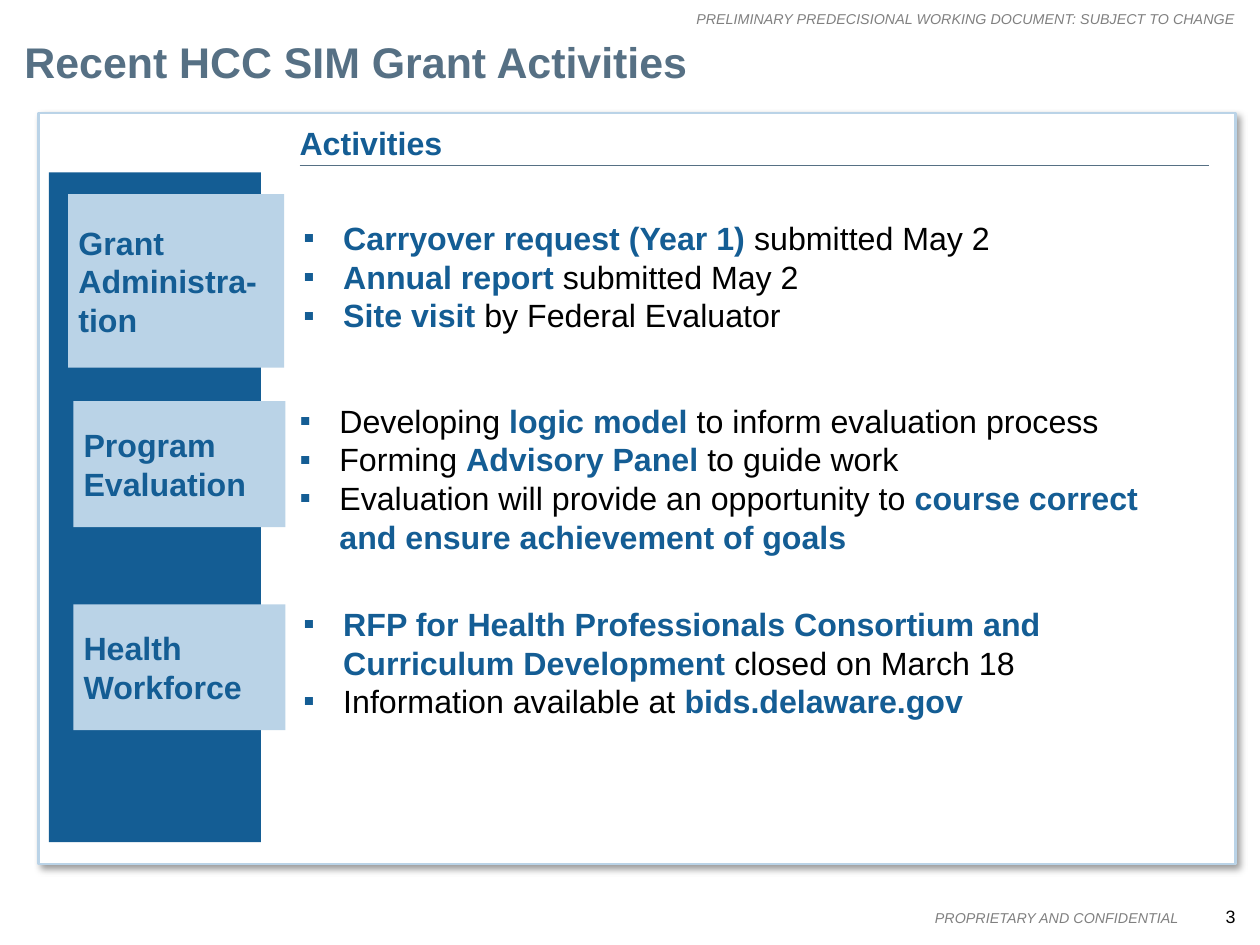
from dataclasses import dataclass

import pptx
import pptx.dml.color
import pptx.enum.shapes
import pptx.enum.text
import pptx.oxml
import pptx.oxml.ns
import pptx.util
from lxml import etree

PX = 9144  # EMU per px, 100 px to the inch
ALIGN = pptx.enum.text.PP_ALIGN
ANCHOR = pptx.enum.text.MSO_ANCHOR


@dataclass(frozen=True)
class Theme:
    font: str = "Arial"
    navy: str = "145D94"
    pale: str = "BAD3E7"
    slate: str = "567084"
    grey: str = "808080"
    black: str = "000000"
    white: str = "FFFFFF"
    title: int = 24
    body: int = 18
    number: int = 10
    note: int = 8


def rgb(colour):
    return pptx.dml.color.RGBColor.from_string(colour)


def add_xml(parent, tag, **attributes):
    element = etree.SubElement(parent, pptx.oxml.ns.qn(tag))
    for name, value in attributes.items():
        element.set(name, str(value))
    return element


class SlideBuilder:
    def __init__(self, page, theme):
        self.page = page
        self.theme = theme

    def style(self, font, size, colour, bold=False, italic=False):
        font.name = self.theme.font
        font.size = pptx.util.Pt(size)
        font.color.rgb = rgb(colour)
        font.bold = bold
        font.italic = italic

    def frame(self, shape, inset=0, anchor=ANCHOR.TOP, wrap=True):
        frame = shape.text_frame
        frame.word_wrap = wrap
        frame.vertical_anchor = anchor
        frame.margin_left = frame.margin_right = inset * PX
        frame.margin_top = frame.margin_bottom = inset * PX
        return frame

    def paragraphs(self, frame, lines):
        for index, line in enumerate(lines):
            para = frame.paragraphs[0] if index == 0 else frame.add_paragraph()
            yield para, line

    def text(self, area, words, size, colour, bold=False, italic=False,
             align=ALIGN.LEFT, anchor=ANCHOR.TOP, wrap=True):
        box = self.page.shapes.add_textbox(*(value * PX for value in area))
        para = self.frame(box, 0, anchor, wrap).paragraphs[0]
        para.text = words
        para.alignment = align
        self.style(para.font, size, colour, bold, italic)

    def rectangle(self, area, fill, outline=None):
        shape = self.page.shapes.add_shape(
            pptx.enum.shapes.MSO_SHAPE.RECTANGLE, *(value * PX for value in area))
        shape.shadow.inherit = False
        shape.fill.solid()
        shape.fill.fore_color.rgb = rgb(fill)
        if outline:
            shape.line.color.rgb = rgb(outline)
            shape.line.width = pptx.util.Pt(1.5)
        else:
            shape.line.fill.background()
        return shape

    def panel(self, area):
        shape = self.rectangle(area, self.theme.white, self.theme.pale)
        effects = shape._element.spPr.find(pptx.oxml.ns.qn("a:effectLst"))
        shadow = add_xml(effects, "a:outerShdw", blurRad=pptx.util.Pt(4),
                         dist=pptx.util.Pt(3), dir=45 * 60000, algn="tl", rotWithShape=0)
        colour = add_xml(shadow, "a:srgbClr", val=self.theme.black)
        add_xml(colour, "a:alpha", val=40000)

    def label(self, area, lines):
        shape = self.rectangle(area, self.theme.pale)
        frame = self.frame(shape, 8, ANCHOR.MIDDLE)
        for para, line in self.paragraphs(frame, lines):
            para.text = line
            para.alignment = ALIGN.LEFT
            self.style(para.font, self.theme.body, self.theme.navy, bold=True)

    def bullets(self, area, lines):
        """Text between ** marks is emphasised."""
        box = self.page.shapes.add_textbox(*(value * PX for value in area))
        for para, line in self.paragraphs(self.frame(box), lines):
            properties = para._p.get_or_add_pPr()
            properties.set("marL", str(31 * PX))
            properties.set("indent", str(-31 * PX))
            add_xml(add_xml(properties, "a:buClr"), "a:srgbClr", val=self.theme.navy)
            add_xml(properties, "a:buFont", typeface=self.theme.font)
            add_xml(properties, "a:buChar", char="▪")
            self.style(para.font, self.theme.body, self.theme.black)
            for index, words in enumerate(line.split("**")):
                if words:
                    span = para.add_run()
                    span.text = words
                    if index % 2:
                        span.font.bold = True
                        span.font.color.rgb = rgb(self.theme.navy)

    def rule(self, left, right, y):
        line = self.page.shapes.add_connector(
            pptx.enum.shapes.MSO_CONNECTOR.STRAIGHT, left * PX, y * PX, right * PX, y * PX)
        line.line.color.rgb = rgb(self.theme.slate)
        line.line.width = pptx.util.Pt(0.75)
        add_xml(line._element.spPr, "a:effectLst")


# Label area, label lines, bullet area, bullet lines
ACTIVITIES = [
    ((53, 151, 168, 135), ["Grant Administra-", "tion"],
     (236, 170, 688, 91),
     ["**Carryover request (Year 1) **submitted May 2",
      "**Annual report **submitted May 2",
      "**Site visit **by Federal Evaluator"]),
    ((57, 312, 165, 98), ["Program Evaluation"],
     (233, 312, 688, 121),
     ["Developing **logic model **to inform evaluation process",
      "Forming **Advisory Panel** to guide work",
      "Evaluation will provide an opportunity to "
      "**course correct and ensure achievement of goals**"]),
    ((57, 470, 165, 98), ["Health Workforce"],
     (236, 470, 688, 91),
     ["**RFP for Health Professionals Consortium and Curriculum Development **"
      "closed on March 18",
      "Information available at **bids.delaware.gov**"]),
]


def main():
    deck = pptx.Presentation()
    deck.slide_width, deck.slide_height = 980 * PX, 735 * PX
    theme = Theme()
    builder = SlideBuilder(deck.slides.add_slide(deck.slide_layouts[6]), theme)

    # Header and footer
    builder.text((537, 8, 424, 13),
                 "PRELIMINARY PREDECISIONAL WORKING DOCUMENT: SUBJECT TO CHANGE",
                 theme.note, theme.grey, italic=True, align=ALIGN.RIGHT, wrap=False)
    builder.text((724, 707, 193, 13), "PROPRIETARY AND CONFIDENTIAL", theme.note,
                 theme.grey, italic=True, align=ALIGN.RIGHT, anchor=ANCHOR.MIDDLE, wrap=False)
    builder.text((944, 704, 17, 17), "3", theme.number, theme.black,
                 align=ALIGN.RIGHT, anchor=ANCHOR.MIDDLE, wrap=False)
    builder.text((19, 28, 943, 40), "Recent HCC SIM Grant Activities",
                 theme.title, theme.slate, bold=True)

    # Panel with side band and column heading
    builder.panel((30, 88, 931, 584))
    builder.rectangle((38, 134, 165, 521), theme.navy)
    builder.text((233, 96, 434, 30), "Activities", theme.body, theme.navy,
                 bold=True, anchor=ANCHOR.BOTTOM)
    builder.rule(233, 940, 129)

    # Activity rows
    for label_area, label_lines, bullet_area, bullet_lines in ACTIVITIES:
        builder.label(label_area, label_lines)
        builder.bullets(bullet_area, bullet_lines)

    deck.save("out.pptx")


if __name__ == "__main__":
    main()
